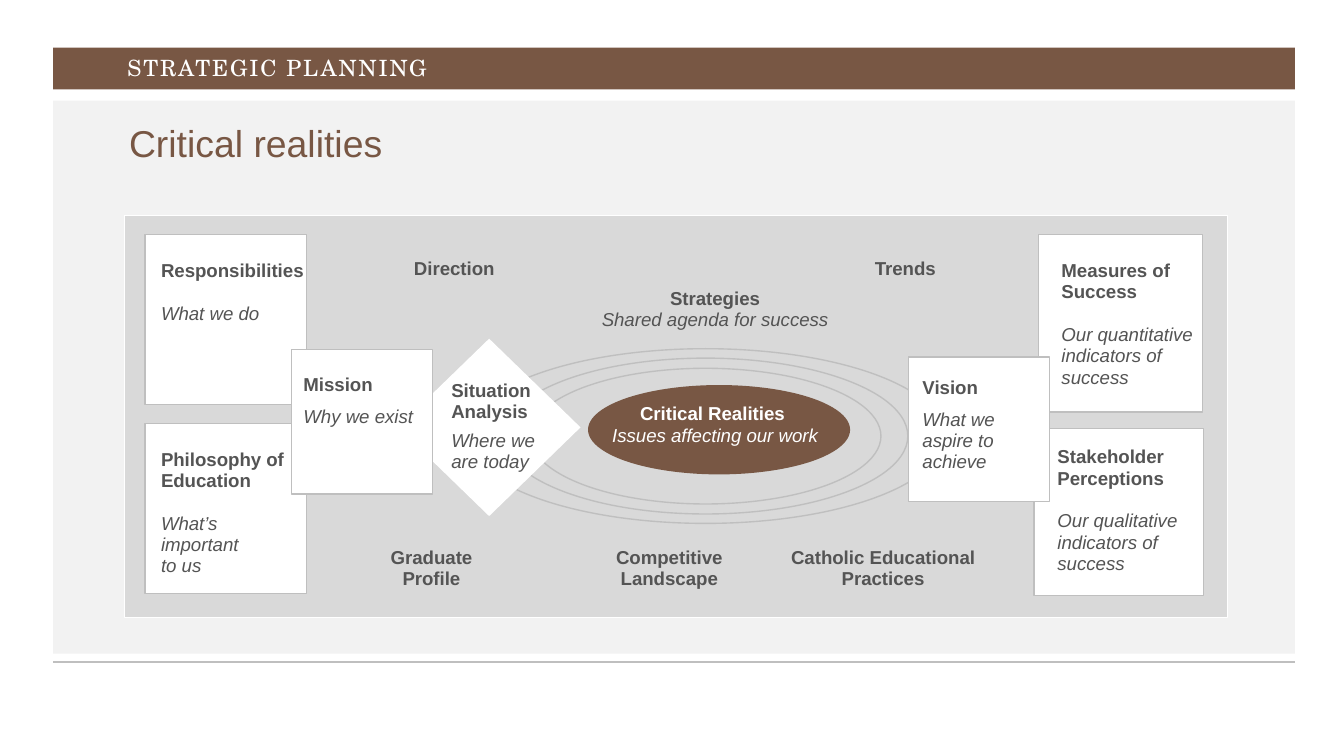
from lxml.etree import SubElement
from pptx import Presentation
from pptx.dml.color import RGBColor
from pptx.enum.shapes import MSO_CONNECTOR, MSO_SHAPE as Shape
from pptx.enum.text import MSO_ANCHOR as Anchor, MSO_AUTO_SIZE, PP_ALIGN as Align
from pptx.oxml.ns import qn
from pptx.util import Inches, Pt

COLORS = {
    "brown": "785744", "panel": "F2F2F2", "board": "D9D9D9",
    "rule": "BFBFBF", "text": "545454", "white": "FFFFFF",
}
COLORS = {name: RGBColor.from_string(code) for name, code in COLORS.items()}

deck = Presentation()
deck.slide_width = Inches(10)
deck.slide_height = deck.slide_width * 9 // 16
UNIT = deck.slide_width // 100  # side of one grid square
page = deck.slides.add_slide(deck.slide_layouts[5])


def add_figure(kind, area, fill=None, line=None):
    """Draw a preset shape; area is left, top, width, height in grid units."""
    figure = page.shapes.add_shape(kind, *(round(n * UNIT) for n in area))
    figure.shadow.inherit = False
    if fill:
        figure.fill.solid()
        figure.fill.fore_color.rgb = COLORS[fill]
    else:
        figure.fill.background()
    if line:
        figure.line.color.rgb = COLORS[line]
        figure.line.width = Pt(0.75)
    else:
        figure.line.fill.background()


def add_text(area, heading, detail=None, gap=0, color="text", align=Align.LEFT, spacing=0.95):
    """Write a bold heading and an italic detail, gap points apart."""
    box = page.shapes.add_textbox(*(round(n * UNIT) for n in area))
    frame = box.text_frame
    frame.word_wrap = True
    frame.text = heading
    frame.paragraphs[0].line_spacing = spacing
    frame.paragraphs[0].space_after = Pt(gap)
    if detail:
        para = frame.add_paragraph()
        para.text = detail
        para.line_spacing = 0.95
    for index, para in enumerate(frame.paragraphs):
        para.alignment = align
        for span in para.runs:
            span.font.name, span.font.size = "Arial", Pt(10)
            span.font.bold, span.font.italic = index == 0, index == 1
            span.font.color.rgb = COLORS[color]
    for line_break in box.element.iter(qn("a:br")):
        SubElement(line_break, qn("a:rPr"), sz="1000")


# Page background, banner and footer rule
add_figure(Shape.RECTANGLE, (3.95, 7.5, 92.4, 41.15), "panel")
add_figure(Shape.RECTANGLE, (9.25, 16.05, 82.1, 29.9), "board", "white")
add_figure(Shape.RECTANGLE, (3.95, 3.55, 92.4, 3.1), "brown")

footer = page.shapes.add_connector(
    MSO_CONNECTOR.STRAIGHT,
    *(round(n * UNIT) for n in (3.95, 49.25, 96.35, 49.25)))
footer.line.color.rgb = COLORS["rule"]
footer.line.width = Pt(0.75)
SubElement(footer.element.spPr, qn("a:effectLst"))

# Banner text and title
banner = page.shapes.add_textbox(
    round(8.5 * UNIT), round(3.1 * UNIT), round(38.9 * UNIT), round(4.1 * UNIT))
title = page.shapes.title
title.left, title.top = round(8.6 * UNIT), round(8.45 * UNIT)
title.width, title.height = round(39.4 * UNIT), round(4.8 * UNIT)
page.shapes.element.append(title.element)  # in front of the panel

for box, words, font, size, color in (
    (banner, "STRATEGIC PLANNING", "TeX Gyre Schola", 12, "white"),
    (title, "Critical realities", "Arial", 20, "brown"),
):
    frame = box.text_frame
    frame.text = words
    frame.word_wrap = True
    frame.auto_size = MSO_AUTO_SIZE.NONE
    frame.vertical_anchor = Anchor.MIDDLE
    para = frame.paragraphs[0]
    para.alignment, para.line_spacing = Align.LEFT, 0.85
    span = para.runs[0]
    span.font.name, span.font.size = font, Pt(size)
    span.font.color.rgb = COLORS[color]
for properties in banner.element.iter(qn("a:rPr")):
    properties.set("spc", "100")  # letter spacing of one point

# Outer cards: card area, text left and top, heading, detail
outer_cards = (
    ((77.25, 17.45, 12.2, 13.2), 78, 18.9, "Measures of Success",
     "Our quantitative indicators of success"),
    ((76.95, 31.9, 12.6, 12.4), 77.7, 32.75, "Stakeholder Perceptions",
     "Our qualitative indicators of success"),
    ((10.8, 17.45, 12, 12.65), 11, 18.9, "Responsibilities", "What we do"),
    ((10.8, 31.5, 12, 12.65), 11, 32.95, "Philosophy of Education",
     "What’s\nimportant\nto us"),
)
for card, left, top, heading, detail in outer_cards:
    add_figure(Shape.RECTANGLE, card, "white", "rule")
    add_text((left, top, 13, 10), heading, detail, gap=11.4)

# Rings around the core
for width, height in ((35.6, 13), (30.1, 11.6), (26.1, 10.1)):
    add_figure(Shape.OVAL, (52.5 - width / 2, 32.45 - height / 2, width, height), line="rule")
add_figure(Shape.OVAL, (43.75, 28.65, 19.5, 6.65), "brown")
add_text((40.55, 29.55, 25.3, 6.9), "Critical Realities ", "Issues affecting our work",
         color="white", align=Align.CENTER)

# Inner cards
add_figure(Shape.DIAMOND, (29.6, 25.2, 13.6, 13.2), "white")
add_figure(Shape.RECTANGLE, (21.7, 26, 10.5, 10.75), "white", "rule")
add_figure(Shape.RECTANGLE, (67.6, 26.55, 10.5, 10.75), "white", "rule")
add_text((21.6, 27.25, 11.3, 8.6), "Mission", "Why we exist", gap=6, spacing=1)
add_text((67.65, 27.45, 10.5, 8.6), "Vision", "What we aspire to achieve", gap=6, spacing=1)
add_text((32.6, 27.8, 9.6, 9.6), "Situation Analysis", "Where we\nare today", gap=4)

# Labels above and below the rings: center, top, width
add_text((40.7, 20.95, 25, 5.9), "Strategies", "Shared agenda for success", align=Align.CENTER)
for center, top, width, label in (
    (33.8, 18.75, 11.4, "Direction"),
    (67.35, 18.75, 10.9, "Trends"),
    (32.1, 40.25, 11.5, "Graduate Profile"),
    (49.8, 40.25, 16, "Competitive Landscape"),
    (65.7, 40.25, 16.4, "Catholic Educational Practices"),
):
    add_text((center - width / 2, top, width, 4.2), label, align=Align.CENTER)

deck.save("out.pptx")
